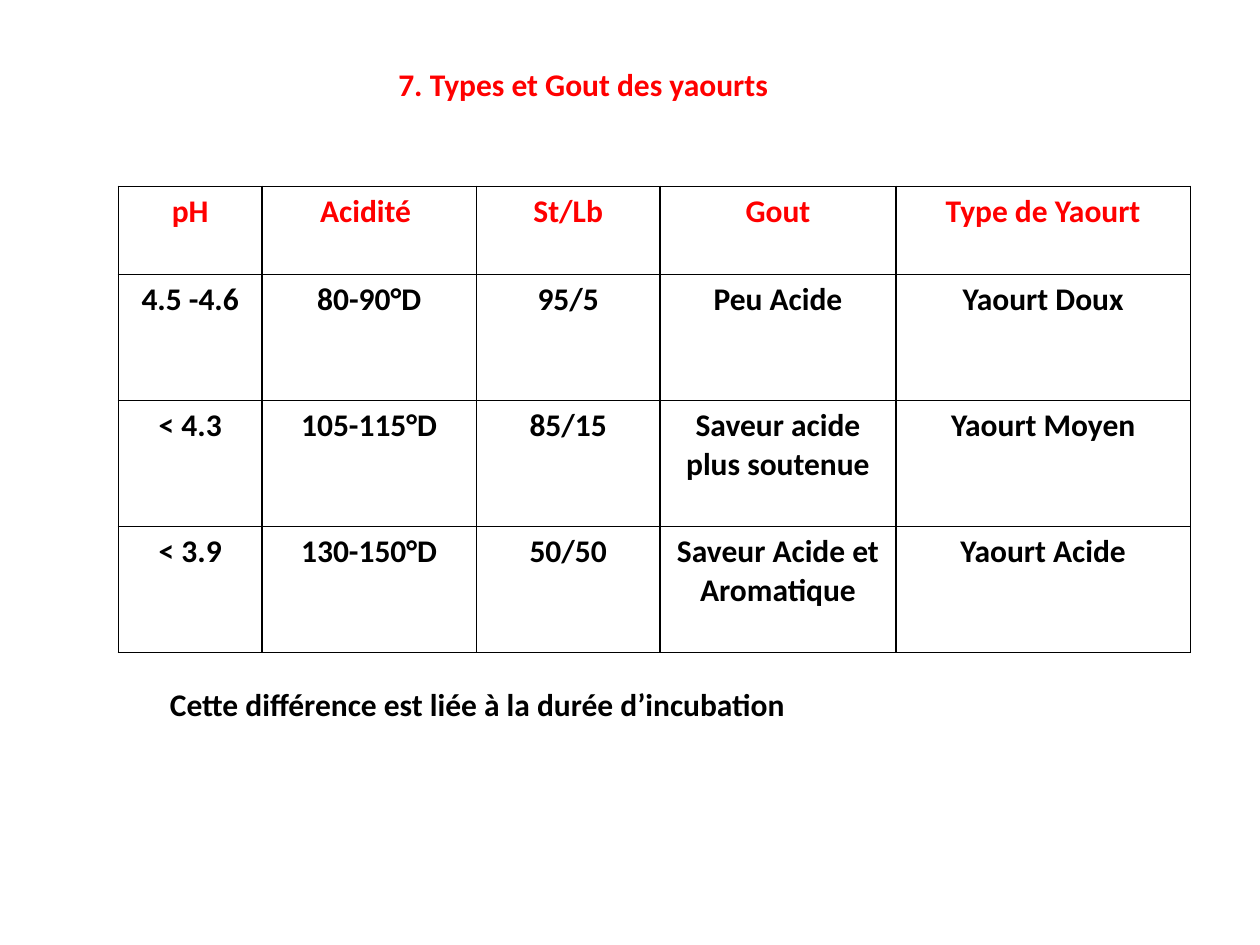
from lxml import etree
from pptx import Presentation
from pptx.dml.color import RGBColor
from pptx.enum.text import PP_ALIGN
from pptx.oxml.ns import qn
from pptx.util import Inches, Pt

LEFT, CENTER = PP_ALIGN.LEFT, PP_ALIGN.CENTER
RED = RGBColor(255, 0, 0)
BLACK = RGBColor(0, 0, 0)
COLS = [1.14, 1.7, 1.46, 1.87, 2.34]
ROWS = [0.7, 1, 1, 1]
DATA = [
    ["pH", "Acidité ", "St/Lb", "Gout", "Type de Yaourt"],
    ["4.5 -4.6", "80-90°D", "95/5", "Peu Acide", "Yaourt Doux"],
    ["< 4.3", "105-115°D", "85/15", "Saveur acide plus soutenue", "Yaourt Moyen"],
    ["< 3.9", "130-150°D", "50/50", "Saveur Acide et Aromatique", "Yaourt Acide"],
]


def write(frame, text, color, align):
    para = frame.paragraphs[0]
    para.alignment = align
    run = para.add_run()
    run.text = text
    run.font.name = "Calibri"
    run.font.size = Pt(18)
    run.font.bold = True
    run.font.color.rgb = color


def border(cell):
    props = cell._tc.get_or_add_tcPr()
    for side in ("lnL", "lnR", "lnT", "lnB"):
        line = etree.SubElement(props, qn("a:" + side), w=str(Pt(1)))
        fill = etree.SubElement(line, qn("a:solidFill"))
        etree.SubElement(fill, qn("a:srgbClr"), val=str(BLACK))


deck = Presentation()
deck.slide_width, deck.slide_height = Inches(10), Inches(7.5)
slide = deck.slides.add_slide(deck.slide_layouts[6])

title = slide.shapes.add_textbox(Inches(3.05), Inches(0.47), Inches(3.16), Inches(0.4))
title.text_frame.word_wrap = False
write(title.text_frame, "7. Types et Gout des yaourts", RED, CENTER)

table = slide.shapes.add_table(
    len(ROWS), len(COLS), Inches(0.94), Inches(1.48), Inches(sum(COLS)), Inches(sum(ROWS))
).table
table.horz_banding = False
for col, width in zip(table.columns, COLS):
    col.width = Inches(width)
for r, (row, height) in enumerate(zip(table.rows, ROWS)):
    row.height = Inches(height)
    for cell, text in zip(row.cells, DATA[r]):
        write(cell.text_frame, text, BLACK if r else RED, CENTER)
        border(cell)
        cell.fill.background()

note = slide.shapes.add_textbox(Inches(1.25), Inches(5.39), Inches(8.28), Inches(0.4))
note.text_frame.word_wrap = True
write(note.text_frame, "Cette différence est liée à la durée d’incubation", BLACK, LEFT)

deck.save("out.pptx")
